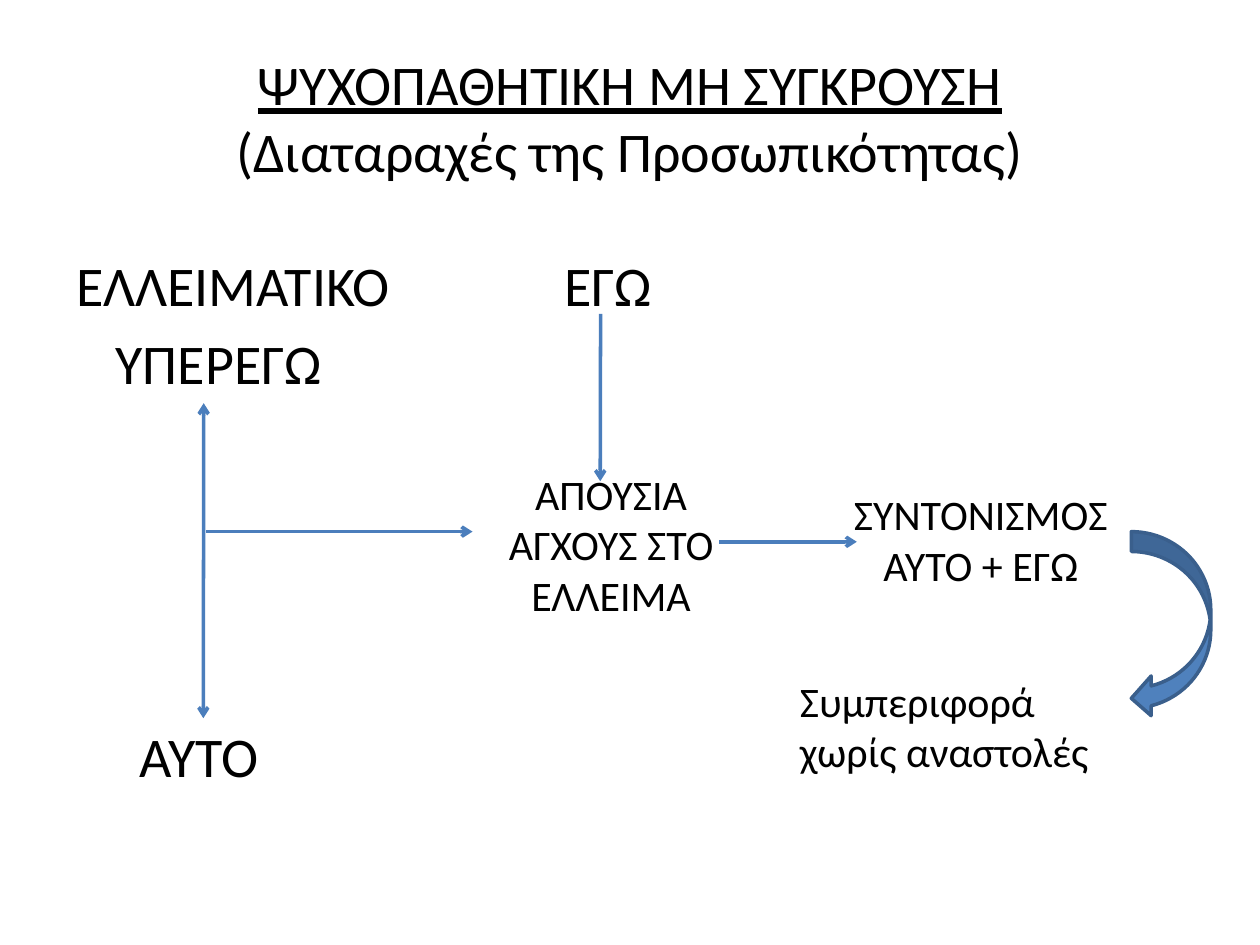
from lxml.etree import SubElement
from pptx import Presentation
from pptx.dml.color import RGBColor
from pptx.enum.shapes import MSO_CONNECTOR, MSO_SHAPE
from pptx.enum.text import MSO_ANCHOR, PP_ALIGN
from pptx.oxml.ns import qn
from pptx.util import Pt

THEME = {
    "font": "Calibri",
    "text": RGBColor(0, 0, 0),
    "arrow": RGBColor(0x4B, 0x7E, 0xBC),
    "fill": RGBColor(0x4F, 0x81, 0xBD),
    "outline": RGBColor(0x3A, 0x5F, 0x8C),
    "line_width": Pt(2),
    "large": Pt(32),
    "medium": Pt(24),
}

TITLE = [("ΨΥΧΟΠΑΘΗΤΙΚΗ ΜΗ ΣΥΓΚΡΟΥΣΗ", True), ("(Διαταραχές της Προσωπικότητας)", False)]
TITLE_BOX = (36, 21.6, 648, 90)

CONCEPTS = [
    ("ΕΛΛΕΙΜΑΤΙΚΟ", (36.7, 139.7, 215, 46)),
    ("ΕΓΩ", (315.4, 139.7, 80, 46)),
    ("ΥΠΕΡΕΓΩ", (59, 184.1, 150, 46)),
    ("ΑΥΤΟ", (72.8, 408.7, 100, 46)),
]

OUTCOMES = [
    (["ΑΠΟΥΣΙΑ", "ΑΓΧΟΥΣ ΣΤΟ", "ΕΛΛΕΙΜΑ"], (281.5, 264.2, 135.4, 94.3), PP_ALIGN.CENTER),
    (["ΣΥΝΤΟΝΙΣΜΟΣ", "ΑΥΤΟ + ΕΓΩ"], (468, 275.8, 185, 65.5), PP_ALIGN.CENTER),
    (["Συμπεριφορά χωρίς αναστολές"], (450, 382.3, 191.5, 65.5), PP_ALIGN.LEFT),
]

ARROWS = [
    ((116.4, 230.4), (116.2, 410.4), ["headEnd", "tailEnd"]),
    ((118, 303.8), (270, 303.8), ["tailEnd"]),
    ((343.2, 179.3), (343, 275), ["tailEnd"]),
    ((411, 309.6), (489.6, 309.6), ["tailEnd"]),
]

CURVED_ARROW = (646.5, 303.8, 45.4, 106.6)


def apply_format(target, values):
    for name, value in values.items():
        setattr(target, name, value)


def add_text(slide, lines, box, size, alignment=PP_ALIGN.LEFT, anchor=MSO_ANCHOR.TOP):
    shape = slide.shapes.add_textbox(*map(Pt, box))
    frame = shape.text_frame
    apply_format(frame, {"word_wrap": True, "vertical_anchor": anchor})
    for index, (text, underline) in enumerate(lines):
        paragraph = frame.add_paragraph() if index else frame.paragraphs[0]
        paragraph.alignment = alignment
        run = paragraph.add_run()
        run.text = text
        apply_format(run.font, {"name": THEME["font"], "size": size, "underline": underline})
        run.font.color.rgb = THEME["text"]


def add_arrow(slide, start, end, heads):
    connector = slide.shapes.add_connector(MSO_CONNECTOR.STRAIGHT, *map(Pt, start + end))
    connector.line.color.rgb = THEME["arrow"]
    connector.line.width = THEME["line_width"]
    line = connector.line._get_or_add_ln()
    for head in heads:
        SubElement(line, qn(f"a:{head}"), type="arrow")
    SubElement(connector._element.spPr, qn("a:effectLst"))


def add_curved_arrow(slide, box):
    shape = slide.shapes.add_shape(MSO_SHAPE.CURVED_LEFT_ARROW, *map(Pt, box))
    shape.shadow.inherit = False
    shape.fill.solid()
    shape.fill.fore_color.rgb = THEME["fill"]
    shape.line.color.rgb = THEME["outline"]
    shape.line.width = THEME["line_width"]


def main():
    presentation = Presentation()
    apply_format(presentation, {"slide_width": Pt(720), "slide_height": Pt(540)})
    slide = presentation.slides.add_slide(presentation.slide_layouts[6])
    add_text(slide, TITLE, TITLE_BOX, THEME["large"], PP_ALIGN.CENTER, MSO_ANCHOR.MIDDLE)
    for text, box in CONCEPTS:
        add_text(slide, [(text, False)], box, THEME["large"])
    for lines, box, alignment in OUTCOMES:
        add_text(slide, [(text, False) for text in lines], box, THEME["medium"], alignment)
    for start, end, heads in ARROWS:
        add_arrow(slide, start, end, heads)
    add_curved_arrow(slide, CURVED_ARROW)
    presentation.save("out.pptx")


if __name__ == "__main__":
    main()
